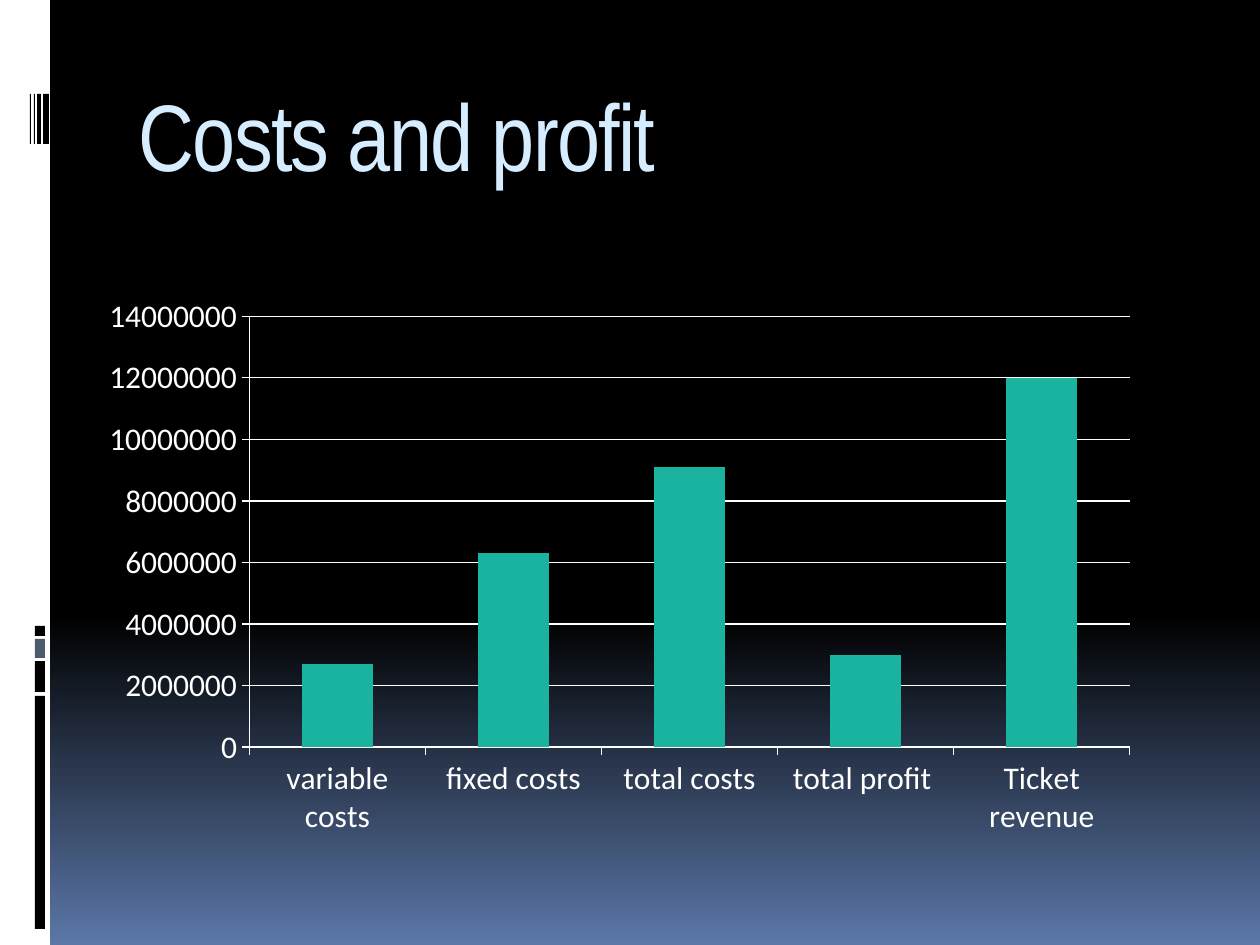
from copy import deepcopy

from pptx import Presentation
from pptx import util as u
from pptx.chart.data import CategoryChartData
from pptx.dml.color import RGBColor
from pptx.enum import chart as charts, shapes, text

COLOURS = {"black": "000000", "white": "FFFFFF", "slate": "4E5B6F",
           "dusk": "5B77A8", "ice": "D6ECFF", "teal": "1AB39F"}
EMU_PER_PX = 914400 / 126
WIDTH, HEIGHT = 1260, 945


def px(length):
    return u.Emu(round(length * EMU_PER_PX))


def colour(name):
    return RGBColor.from_string(COLOURS[name])


class SlideBuilder:
    """Holds the style and the current slide and adds each kind of element."""

    def __init__(self, presentation):
        self.title_font, self.chart_font = "Arial Narrow", "Calibri"
        self.slide = presentation.slides.add_slide(presentation.slide_layouts[5])

    def background(self, stops):
        fill = self.slide.background.fill
        fill.gradient()
        fill.gradient_angle = 270
        first = self.slide.element.xpath(".//p:bg//a:gs")[0]
        first.addnext(deepcopy(first))
        for stop, (position, name) in zip(fill.gradient_stops, stops):
            stop.color.rgb = colour(name)
            stop.position = position

    def bar(self, left, top, width, height, name):
        shape = self.slide.shapes.add_shape(
            shapes.MSO_SHAPE.RECTANGLE, *map(px, (left, top, width, height)))
        shape.shadow.inherit = False
        shape.fill.solid()
        shape.fill.fore_color.rgb = colour(name)
        shape.line.fill.background()

    def title(self, left, top, width, height, words):
        shape = self.slide.shapes.title
        shape.left, shape.top, shape.width, shape.height = map(
            px, (left, top, width, height))
        frame = shape.text_frame
        frame.auto_size = text.MSO_AUTO_SIZE.NONE
        frame.vertical_anchor = text.MSO_ANCHOR.MIDDLE
        paragraph = frame.paragraphs[0]
        paragraph.alignment = text.PP_ALIGN.LEFT
        run = paragraph.add_run()
        run.text = words
        run.font.name, run.font.size = self.title_font, u.Pt(54)
        run.font.color.rgb = colour("ice")
        run.font._element.set("spc", "-100")

    def column_chart(self, left, top, width, height, name, values):
        data = CategoryChartData()
        data.categories = list(values)
        data.add_series(name, list(values.values()))
        chart = self.slide.shapes.add_chart(
            charts.XL_CHART_TYPE.COLUMN_CLUSTERED,
            *map(px, (left, top, width, height)), data).chart
        chart.has_legend = chart.has_title = False
        chart.font.name, chart.font.size = self.chart_font, u.Pt(18)
        chart.font.color.rgb = colour("white")
        plot = chart.plots[0]
        plot.vary_by_categories = False
        plot.gap_width = 150
        fill = plot.series[0].format.fill
        fill.solid()
        fill.fore_color.rgb = colour("teal")
        value_axis, category_axis = chart.value_axis, chart.category_axis
        value_axis.has_major_gridlines = True
        value_axis.minimum_scale, value_axis.maximum_scale = 0, 14000000
        value_axis.major_unit = 2000000
        for axis in (value_axis, category_axis):
            axis.major_tick_mark = charts.XL_TICK_MARK.OUTSIDE
        for part in (value_axis, category_axis, value_axis.major_gridlines):
            part.format.line.color.rgb = colour("white")
            part.format.line.width = u.Pt(0.75)


def main():
    presentation = Presentation()
    presentation.slide_width, presentation.slide_height = px(WIDTH), px(HEIGHT)
    builder = SlideBuilder(presentation)
    builder.background([(0, "black"), (0.65, "black"), (1, "dusk")])
    builder.bar(0, 0, 50, HEIGHT, "white")
    for top, height, name in ((696, 233, "black"), (661, 31, "black"),
                              (639, 19, "slate"), (626, 10, "black")):
        builder.bar(35, top, 10, height, name)
    for left, width in ((43, 6), (37, 4), (34, 1), (30, 1)):
        builder.bar(left, 94, width, 50, "black")
    builder.title(126, 71, 1071, 126, "Costs and profit")
    builder.column_chart(88, 286, 1063, 561, "Series 1", {
        "variable costs": 2700000, "fixed costs": 6300000,
        "total costs": 9100000, "total profit ": 3000000,
        "Ticket revenue": 12000000})
    presentation.save("out.pptx")


if __name__ == "__main__":
    main()
